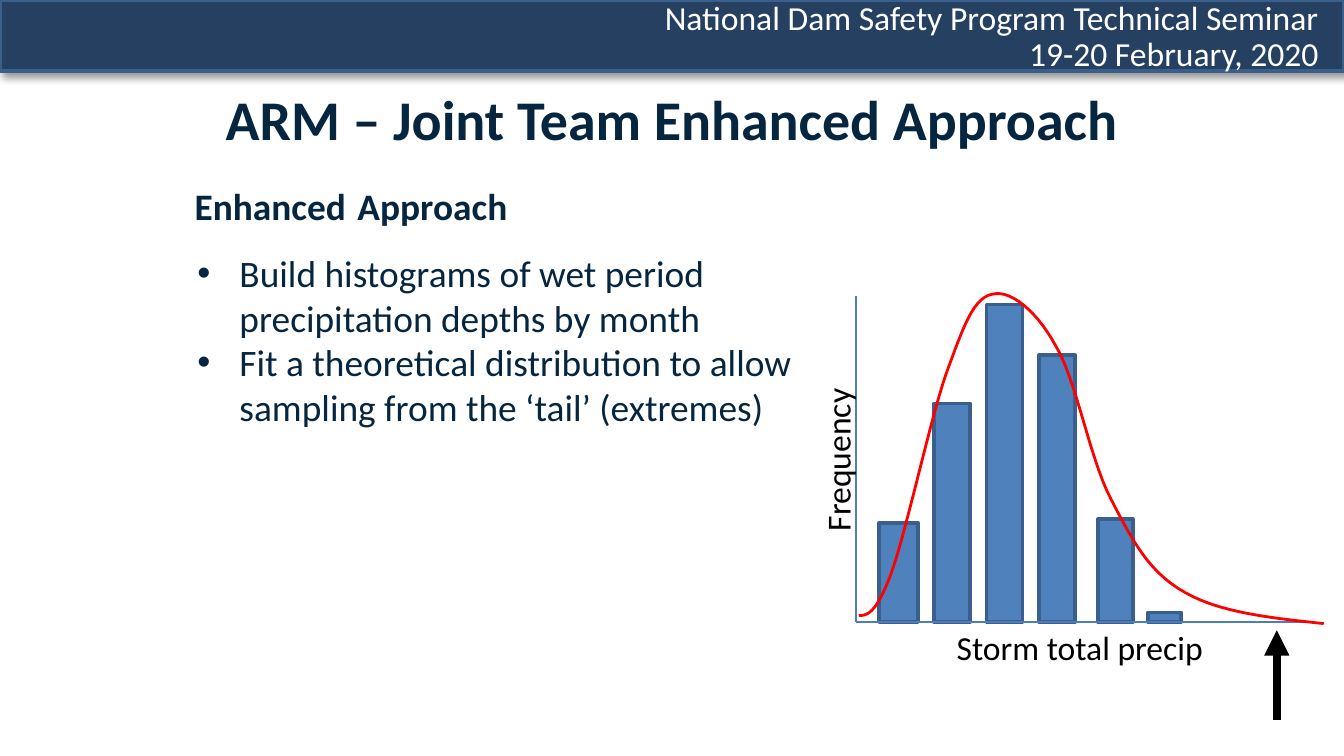
from lxml import etree
from pptx import Presentation
from pptx.dml.color import RGBColor
from pptx.enum import shapes, text
from pptx.oxml import ns
from pptx.util import Pt

NAVY = RGBColor(0x06, 0x26, 0x3F)
BAND = RGBColor(0x25, 0x40, 0x61)
EDGE = RGBColor(0x3A, 0x5F, 0x8C)
BAR = RGBColor(0x4F, 0x81, 0xBD)
AXIS = RGBColor(0x4B, 0x7E, 0xBC)
RED = RGBColor(0xFF, 0, 0)
BLACK = RGBColor(0, 0, 0)
WHITE = RGBColor(0xFF, 0xFF, 0xFF)

SEMINAR = ["National Dam Safety Program Technical Seminar", "19-20 February, 2020"]
TITLE = "ARM – Joint Team Enhanced Approach"
HEADING = [("Enhanced", 20, NAVY), (" ", 27, BLACK), ("Approach", 20, NAVY)]
STEPS = [
    "Build histograms of wet period precipitation depths by month",
    "Fit a theoretical distribution to allow sampling from the ‘tail’ (extremes)",
]
X_LABEL, Y_LABEL = "Storm total precip", "Frequency"

BASELINE = 333.2
AXIS_LEFT, AXIS_RIGHT, AXIS_TOP = 458.6, 699, 158.4
BARS = [
    (470.9, 20.9, 53.2),
    (500.4, 19.4, 117),
    (528.5, 19.4, 170),
    (556.6, 19.4, 142.8),
    (588.2, 18.7, 55),
    (614.9, 18, 5),
]
CURVE_START = (460.1, 329.8)
CURVE = [
    ((464.4, 329.8), (469.4, 329), (477.4, 307.4)),
    ((485.3, 285.8), (498.2, 225.4), (506.9, 200.2)),
    ((516.2, 175), (521.3, 159.8), (531.4, 157.7)),
    ((541.4, 154.8), (555.8, 167), (565.9, 185.8)),
    ((576.7, 203.8), (583.9, 246.2), (595.4, 267.8)),
    ((607, 290.2), (615.6, 306.7), (635, 317.5)),
    ((653.8, 328.3), (681.8, 331.2), (709.2, 334.1)),
]
CURVE_STEPS = 14


def format_font(font, size, color, bold=None):
    font.name, font.size, font.bold = "Calibri", Pt(size), bold
    font.color.rgb = color


def place(shape, left, top, width, height):
    shape.left, shape.top, shape.width, shape.height = map(Pt, (left, top, width, height))


def add_label(slide, lines, box, size, color, wrap=True):
    label = slide.shapes.add_textbox(*map(Pt, box))
    frame = label.text_frame
    frame.word_wrap = wrap
    frame.text = "\n".join(lines)
    for paragraph in frame.paragraphs:
        format_font(paragraph.font, size, color)
    return label


def add_rectangle(parent, box, fill):
    rectangle = parent.shapes.add_shape(shapes.MSO_SHAPE.RECTANGLE, *map(Pt, box))
    rectangle.shadow.inherit = False
    rectangle.fill.solid()
    rectangle.fill.fore_color.rgb = fill
    rectangle.line.color.rgb = EDGE
    rectangle.line.width = Pt(2)
    return rectangle


def add_line(parent, start, end, color, width):
    line = parent.shapes.add_connector(
        shapes.MSO_CONNECTOR.STRAIGHT, *map(Pt, start + end))
    line.line.color.rgb = color
    line.line.width = Pt(width)
    etree.SubElement(line._element.spPr, ns.qn("a:effectLst"))
    return line


def curve_points():
    start = CURVE_START
    for first, second, end in CURVE:
        for step in range(1, CURVE_STEPS + 1):
            t = step / CURVE_STEPS
            weights = ((1 - t) ** 3, 3 * t * (1 - t) ** 2, 3 * t * t * (1 - t), t ** 3)
            yield tuple(
                Pt(sum(w * p[axis] for w, p in zip(weights, (start, first, second, end))))
                for axis in (0, 1))
        start = end


def add_header(slide):
    band = add_rectangle(slide, (0, 0, 720, 38.2), BAND)
    effects = band._element.spPr.find(ns.qn("a:effectLst"))
    shadow = etree.SubElement(
        effects, ns.qn("a:outerShdw"), blurRad=str(Pt(4)), dist=str(Pt(3)),
        dir=str(45 * 60000), rotWithShape="0")
    black = etree.SubElement(shadow, ns.qn("a:srgbClr"), val="000000")
    etree.SubElement(black, ns.qn("a:alpha"), val="40000")
    seminar = add_label(slide, SEMINAR, (288, -2.9, 425.5, 46.8), 18, WHITE)
    for paragraph in seminar.text_frame.paragraphs:
        paragraph.alignment = text.PP_ALIGN.RIGHT
        paragraph.line_spacing = 0.9


def add_content(slide):
    title, steps = slide.placeholders
    place(title, 36, 45.4, 648, 67.7)
    title.text_frame.text = TITLE
    title.text_frame.vertical_anchor = text.MSO_ANCHOR.TOP
    title.text_frame.margin_top = 0
    title.text_frame.paragraphs[0].alignment = text.PP_ALIGN.CENTER
    format_font(title.text_frame.paragraphs[0].font, 30, NAVY, True)

    heading = slide.shapes.add_textbox(*map(Pt, (97.2, 87.8, 347.8, 40.3)))
    heading.text_frame.word_wrap = True
    for words, size, color in HEADING:
        run = heading.text_frame.paragraphs[0].add_run()
        run.text = words
        format_font(run.font, size, color, True)

    place(steps, 98.6, 130.3, 353.5, 104.4)
    steps.text_frame.text = "\n".join(STEPS)
    steps.text_frame.auto_size = text.MSO_AUTO_SIZE.NONE
    for paragraph in steps.text_frame.paragraphs:
        properties = paragraph._p.get_or_add_pPr()
        properties.set("marL", str(Pt(22.5)))
        properties.set("indent", str(Pt(-22.5)))
        paragraph.space_before = Pt(0)
        format_font(paragraph.font, 20, NAVY)


def add_histogram(slide):
    histogram = slide.shapes.add_group_shape()
    for left, width, height in BARS:
        add_rectangle(histogram, (left, BASELINE - height, width, height), BAR)
    origin = (AXIS_LEFT, BASELINE)
    add_line(histogram, origin, (AXIS_RIGHT, BASELINE), AXIS, 0.75)
    add_line(histogram, origin, (AXIS_LEFT, AXIS_TOP), AXIS, 0.75)

    outline = histogram.shapes.build_freeform(*map(Pt, CURVE_START))
    outline.add_line_segments(curve_points(), close=False)
    distribution = outline.convert_to_shape()
    distribution.shadow.inherit = False
    distribution.fill.background()
    distribution.line.color.rgb = RED
    distribution.line.width = Pt(1.5)

    tail_arrow = add_line(slide, (684, 385.9), (684, 337.7), BLACK, 4.5)
    stroke = tail_arrow._element.spPr.find(ns.qn("a:ln"))
    etree.SubElement(stroke, ns.qn("a:tailEnd"), type="triangle")

    add_label(slide, [X_LABEL], (505.4, 332.6, 147.6, 28.8), 18, BLACK, False)
    frequency = add_label(slide, [Y_LABEL], (402.5, 231.1, 92.2, 28.8), 18, BLACK, False)
    frequency.rotation = 270


def main():
    deck = Presentation()
    deck.slide_width, deck.slide_height = Pt(720), Pt(405)
    slide = deck.slides.add_slide(deck.slide_layouts[1])
    add_header(slide)
    add_content(slide)
    add_histogram(slide)
    deck.save("out.pptx")


if __name__ == "__main__":
    main()
